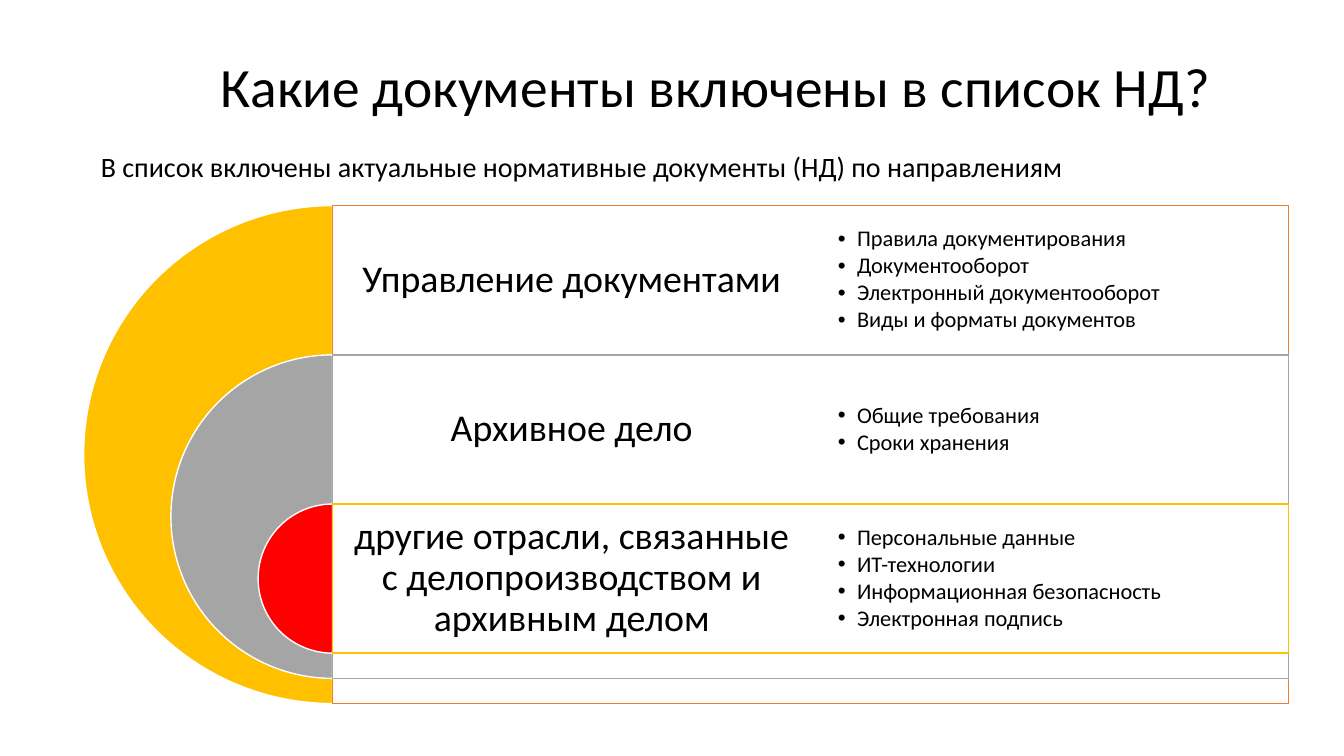
from dataclasses import dataclass

from lxml.etree import SubElement
from pptx import Presentation
from pptx.dml.color import RGBColor
from pptx.enum.shapes import MSO_SHAPE
from pptx.enum.text import MSO_ANCHOR, PP_ALIGN
from pptx.oxml.ns import qn
from pptx.util import Inches, Pt


@dataclass(frozen=True)
class Theme:
    font: str = "Calibri"
    text: str = "000000"
    white: str = "FFFFFF"
    orange: str = "ED7D31"
    gold: str = "FFC000"
    gray: str = "A5A5A5"
    red: str = "FF0000"
    title: float = 39.6
    heading: float = 27
    lead: float = 20
    item: float = 16


class SlideBuilder:
    def __init__(self, prs, theme):
        self.theme = theme
        self.s = prs.slides.add_slide(prs.slide_layouts[6])

    def shape(self, kind, box, fill, line, opacity=None):
        sp = self.s.shapes.add_shape(kind, *map(Inches, box))
        sp.shadow.inherit = False
        sp.fill.solid()
        sp.fill.fore_color.rgb = RGBColor.from_string(fill)
        sp.line.color.rgb = RGBColor.from_string(line)
        sp.line.width = Pt(1)
        if opacity is not None:
            color = sp.fill._xPr.find(qn("a:solidFill"))[0]
            SubElement(color, qn("a:alpha"), val=str(opacity * 1000))
        return sp

    def half_disc(self, box, fill):
        sp = self.shape(MSO_SHAPE.PIE, box, fill, self.theme.white)
        sp.adjustments[0] = 54
        sp.adjustments[1] = 162

    def panel(self, box, line):
        self.shape(MSO_SHAPE.RECTANGLE, box, self.theme.white, line, opacity=90)

    def text(self, lines, box, size, align=PP_ALIGN.LEFT, anchor=MSO_ANCHOR.TOP,
             inset=(0.11, 0.05), bullet=False, after=0):
        tf = self.s.shapes.add_textbox(*map(Inches, box)).text_frame
        tf.word_wrap = True
        tf.vertical_anchor = anchor
        tf.margin_left = tf.margin_right = Inches(inset[0])
        tf.margin_top = tf.margin_bottom = Inches(inset[1])
        for i, line in enumerate(lines):
            p = tf.paragraphs[0] if i == 0 else tf.add_paragraph()
            p.alignment = align
            p.line_spacing = 0.9
            p.space_after = Pt(after)
            if bullet:
                pPr = p._p.get_or_add_pPr()
                pPr.set("marL", str(Inches(0.19)))
                pPr.set("indent", str(-Inches(0.19)))
                SubElement(pPr, qn("a:buFont"), typeface="Arial")
                SubElement(pPr, qn("a:buChar"), char="•")
            r = p.add_run()
            r.text = line
            r.font.name = self.theme.font
            r.font.size = Pt(size)
            r.font.color.rgb = RGBColor.from_string(self.theme.text)


def main():
    prs = Presentation()
    prs.slide_width, prs.slide_height = Inches(13.33), Inches(7.5)
    theme = Theme()
    b = SlideBuilder(prs, theme)

    b.text(["Какие документы включены в список НД?"], (2.08, 0.54, 10.29, 0.58), theme.title)
    b.text(["В список включены актуальные нормативные документы (НД) по направлениям"],
           (0.89, 1.47, 11.67, 0.41), theme.lead)

    directions = [
        ("Управление документами", theme.gold, theme.orange,
         ["Правила документирования", "Документооборот",
          "Электронный документооборот", "Виды и форматы документов"]),
        ("Архивное дело", theme.gray, theme.gray,
         ["Общие требования", "Сроки хранения"]),
        ("другие отрасли, связанные с делопроизводством и архивным делом",
         theme.red, theme.gold,
         ["Персональные данные", "ИТ-технологии",
          "Информационная безопасность", "Электронная подпись"]),
    ]
    left, top, row, column = 3.3, 2.04, 1.48, 4.74
    diameter, shrink = 4.94, 1.73
    for i, (heading, fill, line, items) in enumerate(directions):
        y = top + i * row
        d = diameter - i * shrink
        b.half_disc((left - d / 2, y, d, d), fill)
        b.panel((left, y, 2 * column, d), line)
        b.text([heading], (left, y, column, row), theme.heading, align=PP_ALIGN.CENTER,
               anchor=MSO_ANCHOR.MIDDLE, inset=(0.11, 0.11))
        b.text(items, (left + column, y, column, row), theme.item,
               anchor=MSO_ANCHOR.MIDDLE, inset=(0.27, 0.27), bullet=True, after=2)

    prs.save("out.pptx")


if __name__ == "__main__":
    main()
